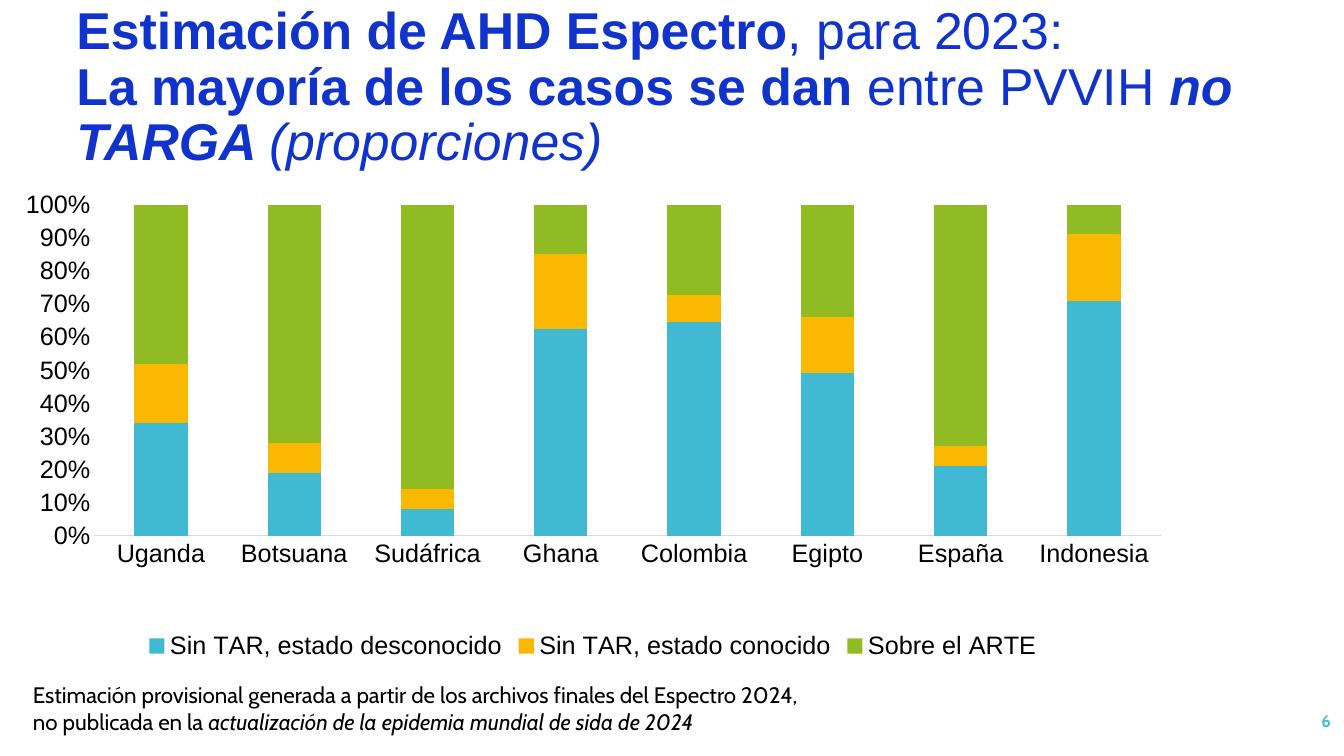
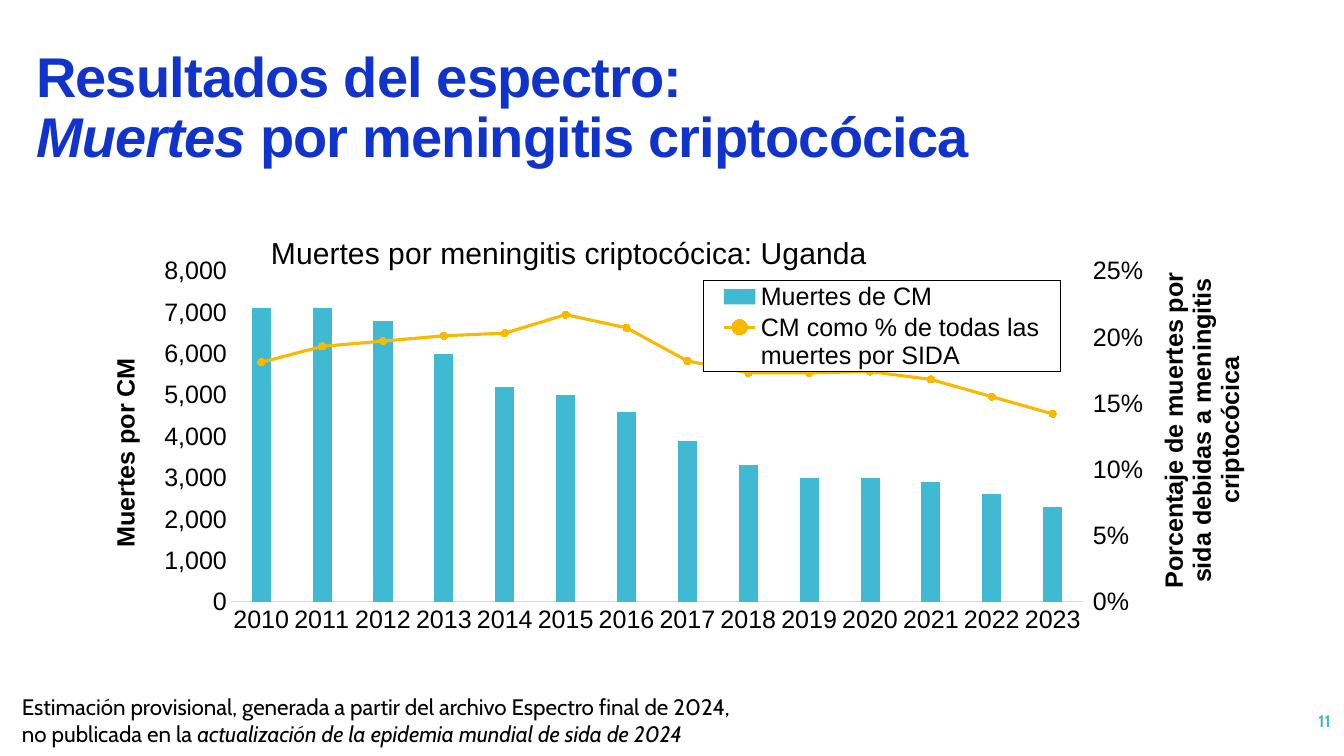
from pptx import Presentation
from pptx.chart.axis import ValueAxis
from pptx.chart.data import CategoryChartData
from pptx.dml.color import RGBColor
from pptx.enum import chart as charts, text
from pptx.oxml import parse_xml
from pptx.oxml.ns import nsdecls, qn
from pptx.util import Pt

BLUE, TEAL, AMBER, GREEN, BLACK, GREY = "0F33CB", "40BAD2", "FAB900", "90BB23", "000000", "D9D9D9"
TYPES, TICKS = charts.XL_CHART_TYPE, charts.XL_TICK_MARK
color = RGBColor.from_string


def add_text(slide, box, pieces, size, font, ink, anchor="MIDDLE", align="LEFT", line_spacing=None, tracking=0):
    """Add one paragraph; each piece is (text, style), with b for bold and i for italic."""
    frame = slide.shapes.add_textbox(*[Pt(n) for n in box]).text_frame
    frame.word_wrap = True
    frame.vertical_anchor = text.MSO_ANCHOR[anchor]
    paragraph = frame.paragraphs[0]
    paragraph.alignment = text.PP_ALIGN[align]
    paragraph.line_spacing = line_spacing
    for words, style in pieces:
        if words == "\n":
            paragraph.add_line_break()
            continue
        run = paragraph.add_run()
        run.text = words
        run.font.size, run.font.name = Pt(size), font
        run.font.color.rgb = color(ink)
        run.font.bold, run.font.italic = "b" in style, "i" in style
        if tracking:
            run.font._element.set("spc", str(tracking))


def place(element, index, x, y, width=None, height=None, inner=False):
    """Give a chart part a fixed place, in fractions of the chart."""
    for layout in element.findall(qn("c:layout")):
        element.remove(layout)
    marks = '<c:layoutTarget val="inner"/>' if inner else ""
    marks += '<c:xMode val="edge"/><c:yMode val="edge"/>'
    for name, value in zip("xywh", (x, y, width, height)):
        if value is not None:
            marks += f'<c:{name} val="{value}"/>'
    element.insert(index, parse_xml(
        f'<c:layout {nsdecls("c")}><c:manualLayout>{marks}</c:manualLayout></c:layout>'))


presentation = Presentation()
presentation.slide_width, presentation.slide_height = Pt(960), Pt(540)

# Content of each slide
pages = [
    dict(
        number="6",
        title_box=(47.5, 10.8, 912, 104.4), title_size=37, tracking=0,
        title=[("Estimación de AHD Espectro", "b"), (", para 2023:", ""), ("\n", ""),
               ("La mayoría de los casos se dan ", "b"), ("entre PVVIH ", ""),
               ("no TARGA ", "bi"), ("(proporciones)", "i")],
        note_box=(16.5, 483, 642, 46),
        note="Estimación provisional generada a partir de los archivos finales del Espectro 2024,",
        chart_at=(9.4, 132.5), kind=TYPES.COLUMN_STACKED_100, gap=150, overlap=100,
        plot=(0.07, 0.04, 0.92, 0.69), value_format="0%", scale=(1, 0.1),
        categories=["Uganda", "Botsuana", "Sudáfrica", "Ghana", "Colombia", "Egipto", "España", "Indonesia"],
        series=[("Sin TAR, estado desconocido", TEAL, [34, 19, 8, 63, 64, 49, 21, 71]),
                ("Sin TAR, estado conocido", AMBER, [18, 9, 6, 23, 8, 17, 6, 20]),
                ("Sobre el ARTE", GREEN, [48, 72, 85, 15, 27, 34, 73, 9])],
    ),
    dict(
        number="11",
        title_box=(18.7, 25.9, 809, 104.4), title_size=40, tracking=-60,
        title=[("Resultados del espectro:", "b"), ("\n", ""),
               ("Muertes ", "bi"), ("por meningitis criptocócica", "b")],
        note_box=(8.6, 491.8, 642, 46),
        note="Estimación provisional, generada a partir del archivo Espectro final de 2024,",
        chart_at=(66.2, 149), kind=TYPES.COLUMN_CLUSTERED, gap=219, overlap=-27,
        plot=(0.12, 0.13, 0.74, 0.69), value_format="#,##0", scale=(8000, 1000),
        categories=[str(year) for year in range(2010, 2024)],
        series=[("Muertes de CM", TEAL,
                 [7100, 7100, 6800, 6000, 5200, 5000, 4600, 3900, 3300, 3000, 3000, 2900, 2600, 2300]),
                ("CM como % de todas las muertes por SIDA", AMBER,
                 [0.181, 0.193, 0.197, 0.201, 0.203, 0.217, 0.207,
                  0.182, 0.173, 0.173, 0.174, 0.168, 0.155, 0.142])],
    ),
]

for page in pages:
    slide = presentation.slides.add_slide(presentation.slide_layouts[6])

    # Page number, title and note
    add_text(slide, (837.4, 500.4, 120.2, 28.8), [(page["number"], "b")], 12, "Cabin", TEAL, align="RIGHT")
    add_text(slide, page["title_box"], page["title"], page["title_size"], "Arial", BLUE,
             line_spacing=0.9, tracking=page["tracking"])
    note = [(page["note"], ""), ("\n", ""), ("no publicada en la ", ""),
            ("actualización de la epidemia mundial de sida de 2024", "i")]
    add_text(slide, page["note_box"], note, 16, "Cabin", BLACK, anchor="TOP")

    # Column chart
    data = CategoryChartData()
    data.categories = page["categories"]
    for name, _, values in page["series"]:
        data.add_series(name, values)
    left, top = page["chart_at"]
    chart = slide.shapes.add_chart(page["kind"], Pt(left), Pt(top), Pt(828), Pt(342.7), data).chart
    chart.has_title = False
    chart.font.size, chart.font.name = Pt(18), "Arial"
    chart.font.color.rgb = color(BLACK)
    plot = chart.plots[0]
    plot.gap_width, plot.overlap, plot.vary_by_categories = page["gap"], page["overlap"], False
    for series, (_, fill, _) in zip(plot.series, page["series"]):
        series.format.fill.solid()
        series.format.fill.fore_color.rgb = color(fill)
    plot_area = chart._chartSpace.chart.plotArea
    place(plot_area, 0, *page["plot"], inner=True)

    # Axes and legend
    category_axis, value_axis = chart.category_axis, chart.value_axis
    category_axis.major_tick_mark = value_axis.major_tick_mark = TICKS.NONE
    category_axis.format.line.color.rgb = color(GREY)
    category_axis.format.line.width = Pt(0.75)
    value_axis.format.line.fill.background()
    value_axis.has_major_gridlines = False
    value_axis.minimum_scale = 0
    value_axis.maximum_scale, value_axis.major_unit = page["scale"]
    value_axis.tick_labels.number_format = page["value_format"]
    value_axis.tick_labels.number_format_is_linked = False
    chart.has_legend = True
    chart.legend.position = charts.XL_LEGEND_POSITION.BOTTOM
    chart.legend.include_in_layout = False

# Second slide: the share of deaths becomes a line on a right-hand axis
columns = plot_area.find(qn("c:barChart"))
line_chart = parse_xml(
    f'<c:lineChart {nsdecls("c")}><c:grouping val="standard"/><c:varyColors val="0"/>'
    '<c:marker val="1"/><c:axId val="5001"/><c:axId val="5002"/></c:lineChart>')
share = columns.findall(qn("c:ser"))[1]
for bar_setting in share.findall(qn("c:invertIfNegative")):
    share.remove(bar_setting)
line_chart.insert(2, share)
columns.addnext(line_chart)
hidden_axis = parse_xml(
    f'<c:catAx {nsdecls("c")}><c:axId val="5001"/><c:scaling/><c:delete val="1"/>'
    '<c:axPos val="b"/><c:crossAx val="5002"/></c:catAx>')
share_axis_xml = parse_xml(
    f'<c:valAx {nsdecls("c")}><c:axId val="5002"/><c:scaling/><c:delete val="0"/>'
    '<c:axPos val="r"/><c:crossAx val="5001"/><c:crosses val="max"/></c:valAx>')
plot_area.findall(qn("c:valAx"))[-1].addnext(share_axis_xml)
share_axis_xml.addnext(hidden_axis)

share_series = chart.plots[1].series[0]
share_series.smooth = False
share_series.format.line.color.rgb = color(AMBER)
share_series.format.line.width = Pt(2.25)
marker = share_series.marker
marker.style, marker.size = charts.XL_MARKER_STYLE.CIRCLE, 5
marker.format.fill.solid()
marker.format.fill.fore_color.rgb = marker.format.line.color.rgb = color(AMBER)

share_axis = ValueAxis(share_axis_xml)
share_axis.minimum_scale, share_axis.maximum_scale, share_axis.major_unit = 0, 0.25, 0.05
share_axis.major_tick_mark = TICKS.OUTSIDE
share_axis.format.line.fill.background()
share_axis.tick_labels.number_format = "0%"
share_axis.tick_labels.number_format_is_linked = False

# Second slide: titles of the chart and of its axes
chart.has_title = True
titles = [
    (chart.chart_title, "Muertes por meningitis criptocócica: Uganda", 21.6, False, 0.15, 0.04),
    (value_axis.axis_title, "Muertes por CM", 18, True, 0.01, 0.3),
    (share_axis.axis_title, "Porcentaje de muertes por sida debidas a meningitis criptocócica",
     18, True, 0.92, 0.12),
]
for title, words, size, bold, x, y in titles:
    frame = title.text_frame
    frame.text = words
    font = frame.paragraphs[0].runs[0].font
    font.size, font.name, font.bold = Pt(size), "Arial", bold
    font.color.rgb = color(BLACK)
    if bold:
        frame._txBody.bodyPr.set("rot", "-5400000")
        frame._txBody.bodyPr.set("vert", "horz")
    place(title._element, 1, x, y)

# Second slide: framed legend over the plot
legend = chart.legend._element
place(legend, 1, 0.53, 0.15, 0.31, 0.19)
legend.find(qn("c:overlay")).addnext(parse_xml(
    f'<c:spPr {nsdecls("c", "a")}><a:solidFill><a:srgbClr val="FFFFFF"/></a:solidFill>'
    f'<a:ln w="6350"><a:solidFill><a:srgbClr val="{BLACK}"/></a:solidFill></a:ln></c:spPr>'))

presentation.save("out.pptx")
